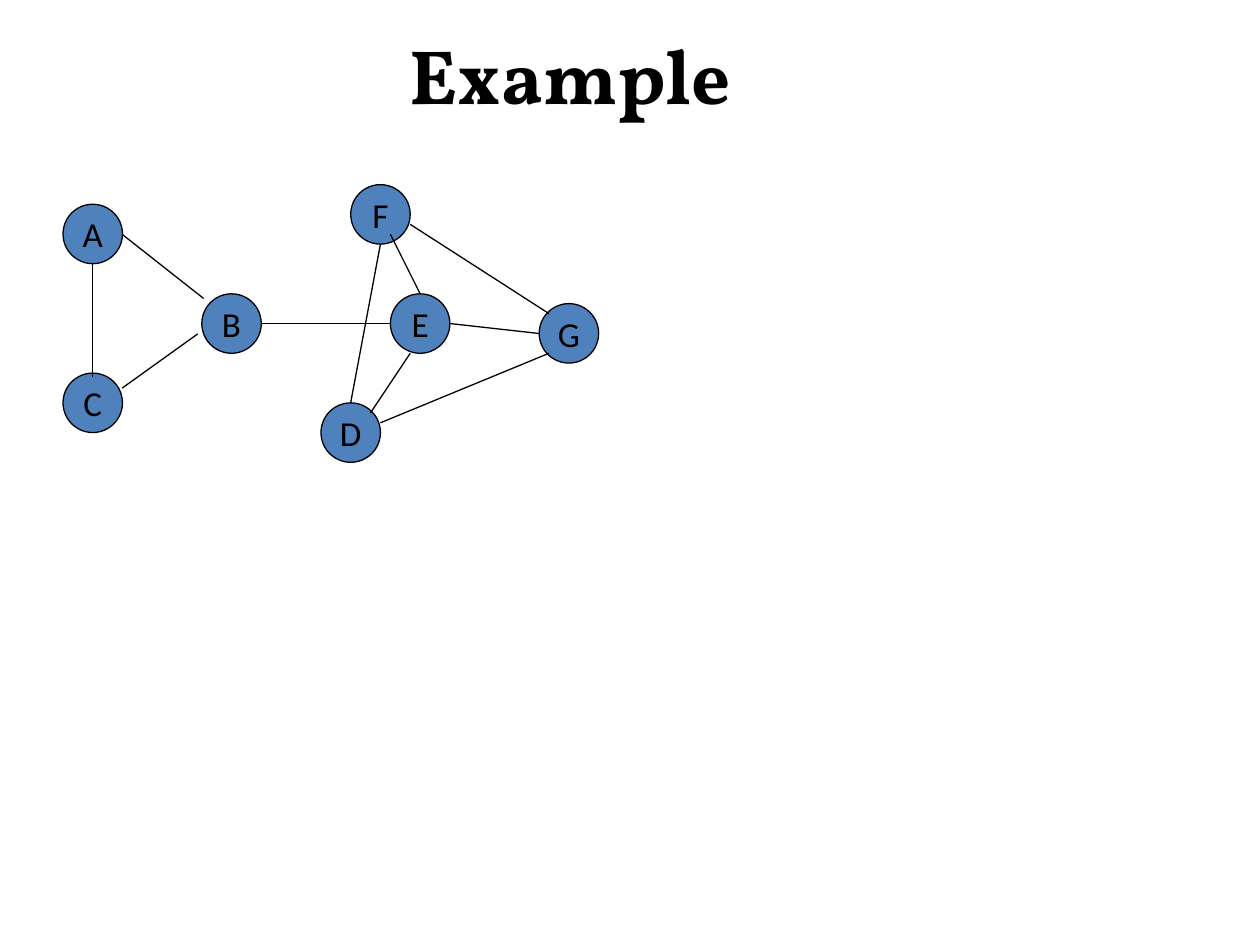
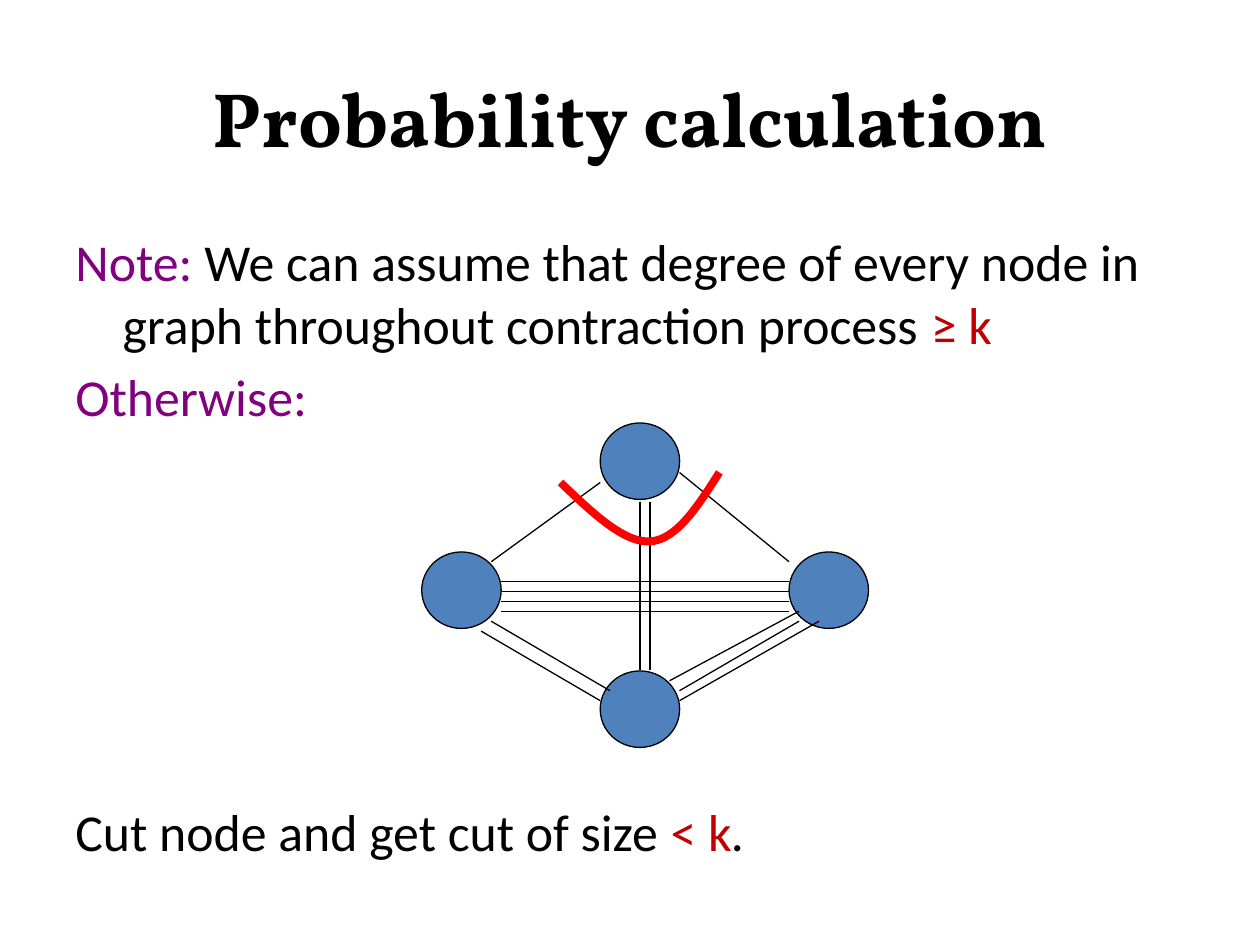
from lxml.etree import SubElement
from pptx import Presentation
from pptx.dml.color import RGBColor
from pptx.enum.shapes import MSO_CONNECTOR, MSO_SHAPE
from pptx.enum.text import MSO_ANCHOR, PP_ALIGN
from pptx.oxml.ns import qn
from pptx.util import Pt

BLACK = RGBColor(0, 0, 0)
NODE_BLUE = RGBColor(0x4F, 0x81, 0xBD)
CUT_RED = RGBColor(0xFF, 0, 0)
PURPLE = RGBColor(0x80, 0, 0x80)
DARK_RED = RGBColor(0xC0, 0, 0)

TITLE_FONT = {"name": "Vollkorn", "size": Pt(44), "bold": True}
BODY_FONT = {"name": "Calibri", "size": Pt(29.6)}
LABEL_FONT = {"name": "Calibri", "size": Pt(20)}
HANGING = {"marL": Pt(27), "indent": Pt(-27)}

CLUSTER_NODES = {
    "A": (36, 116.7), "C": (36, 213.2), "B": (115.3, 167.9),
    "D": (183.4, 230.2), "G": (308.1, 173.5), "E": (223.1, 167.9),
    "F": (200.4, 105.5),
}
CLUSTER_EDGES = [
    (113, 190.8, 69.8, 221.8), (116.4, 170.6, 69.8, 133.9),
    (53, 215.3, 53, 151), (223.1, 184.9, 149.3, 184.9),
    (200.4, 230.2, 217.4, 139.5), (234.4, 128.2, 313.7, 179.2),
    (217.4, 241.6, 313.7, 201.9), (257.1, 184.9, 308.1, 190.6),
    (240.1, 167.9, 223.1, 133.9), (234.4, 201.9, 211.7, 236),
]

CUT_NODES = [(241, 315.4), (343, 241.7), (343, 383.4), (450.9, 315.4)]
VERTICAL_EDGES = [(x, 287, x, 383) for x in (365.7, 371.4)]
HORIZONTAL_EDGES = [(286.3, y, 450.9, y) for y in (332.4 + 5.67 * i for i in range(4))]
SLANTED_EDGES = [
    (343, 275.7, 280.7, 321), (388.3, 270, 450.9, 321),
    (280.7, 355, 348.6, 394.7), (343, 400.4, 275, 360.7),
    (382.6, 389, 456.6, 349.3), (388.3, 394.7, 456.6, 355),
    (388.3, 400.4, 468, 355),
]
CUT_CURVE = [
    [(320.3, 275.7), (338.4, 293), (356.4, 310.3), (371.5, 309.4)],
    [(371.5, 309.4), (386.6, 308.5), (398.9, 289.2), (411.1, 270)],
]


def apply(target, formats):
    for attribute, value in formats.items():
        setattr(target, attribute, value)


def bezier(controls, steps=20):
    weights = (1, 3, 3, 1)
    for step in range(steps + 1):
        t = step / steps
        factors = [w * (1 - t) ** (3 - i) * t ** i for i, w in enumerate(weights)]
        yield tuple(Pt(sum(f * point[axis] for f, point in zip(factors, controls)))
                    for axis in (0, 1))


class Deck:
    """Hold the shared style and the current slide, and draw each kind of element."""

    def __init__(self):
        self.presentation = Presentation()
        apply(self.presentation, {"slide_width": Pt(720), "slide_height": Pt(540)})

    def new_slide(self):
        self.slide = self.presentation.slides.add_slide(self.presentation.slide_layouts[6])
        self.shapes = self.slide.shapes

    def phrase(self, paragraph, text, font, colour=BLACK, **extra):
        run = paragraph.add_run()
        run.text = text
        apply(run.font, font | extra)
        run.font.color.rgb = colour

    def outline(self, shape, colour=BLACK, width=0.75):
        shape.line.color.rgb = colour
        shape.line.width = Pt(width)

    def title(self, text, left, top):
        frame = self.shapes.add_textbox(Pt(left), Pt(top), Pt(648), Pt(90)).text_frame
        apply(frame, {"word_wrap": True, "vertical_anchor": MSO_ANCHOR.MIDDLE})
        frame.paragraphs[0].alignment = PP_ALIGN.CENTER
        self.phrase(frame.paragraphs[0], text, TITLE_FONT)

    def body(self, statements):
        frame = self.shapes.add_textbox(Pt(36), Pt(128), Pt(648), Pt(354)).text_frame
        frame.word_wrap = True
        for index, (space, pieces) in enumerate(statements):
            paragraph = frame.add_paragraph() if index else frame.paragraphs[0]
            paragraph.space_before = Pt(space)
            for attribute, length in HANGING.items():
                paragraph._p.get_or_add_pPr().set(attribute, str(length))
            for text, colour, extra in pieces:
                self.phrase(paragraph, text, BODY_FONT, colour, **extra)

    def node(self, left, top, width, height, label=""):
        node = self.shapes.add_shape(MSO_SHAPE.OVAL, Pt(left), Pt(top), Pt(width), Pt(height))
        node.shadow.inherit = False
        node.fill.solid()
        node.fill.fore_color.rgb = NODE_BLUE
        self.outline(node)
        if label:
            apply(node.text_frame, {"word_wrap": False, "vertical_anchor": MSO_ANCHOR.MIDDLE})
            paragraph = node.text_frame.paragraphs[0]
            paragraph.alignment = PP_ALIGN.CENTER
            self.phrase(paragraph, label, LABEL_FONT)

    def edge(self, *ends):
        edge = self.shapes.add_connector(MSO_CONNECTOR.STRAIGHT, *map(Pt, ends))
        self.outline(edge)
        SubElement(edge._element.spPr, qn("a:effectLst"))

    def cut(self, segments):
        points = [point for controls in segments for point in bezier(controls)]
        builder = self.shapes.build_freeform(*points[0])
        builder.add_line_segments(points[1:], close=False)
        cut = builder.convert_to_shape()
        cut.shadow.inherit = False
        cut.fill.background()
        self.outline(cut, CUT_RED, 4.5)


def example(deck):
    deck.new_slide()
    deck.title("Example", 2, -3)
    for label, corner in CLUSTER_NODES.items():
        deck.node(*corner, 34, 34, label)
    for ends in CLUSTER_EDGES:
        deck.edge(*ends)


def probability(deck):
    deck.new_slide()
    deck.title("Probability calculation", 36, 21.6)
    deck.body([
        (0, [("Note:", PURPLE, {}),
             (" We can assume that degree of every node in graph throughout"
              " contraction process ", BLACK, {}),
             ("≥ k", DARK_RED, {})]),
        (6, [("Otherwise:", PURPLE, {})]),
        (213, [("Cut node and get cut of size ", BLACK, {}),
               ("< k", DARK_RED, {}),
               (".", BLACK, {"italic": True})]),
    ])
    for corner in CUT_NODES:
        deck.node(*corner, 45.4, 43.7)
    for ends in VERTICAL_EDGES + HORIZONTAL_EDGES + SLANTED_EDGES:
        deck.edge(*ends)
    deck.cut(CUT_CURVE)


def main():
    deck = Deck()
    example(deck)
    probability(deck)
    deck.presentation.save("out.pptx")


if __name__ == "__main__":
    main()
